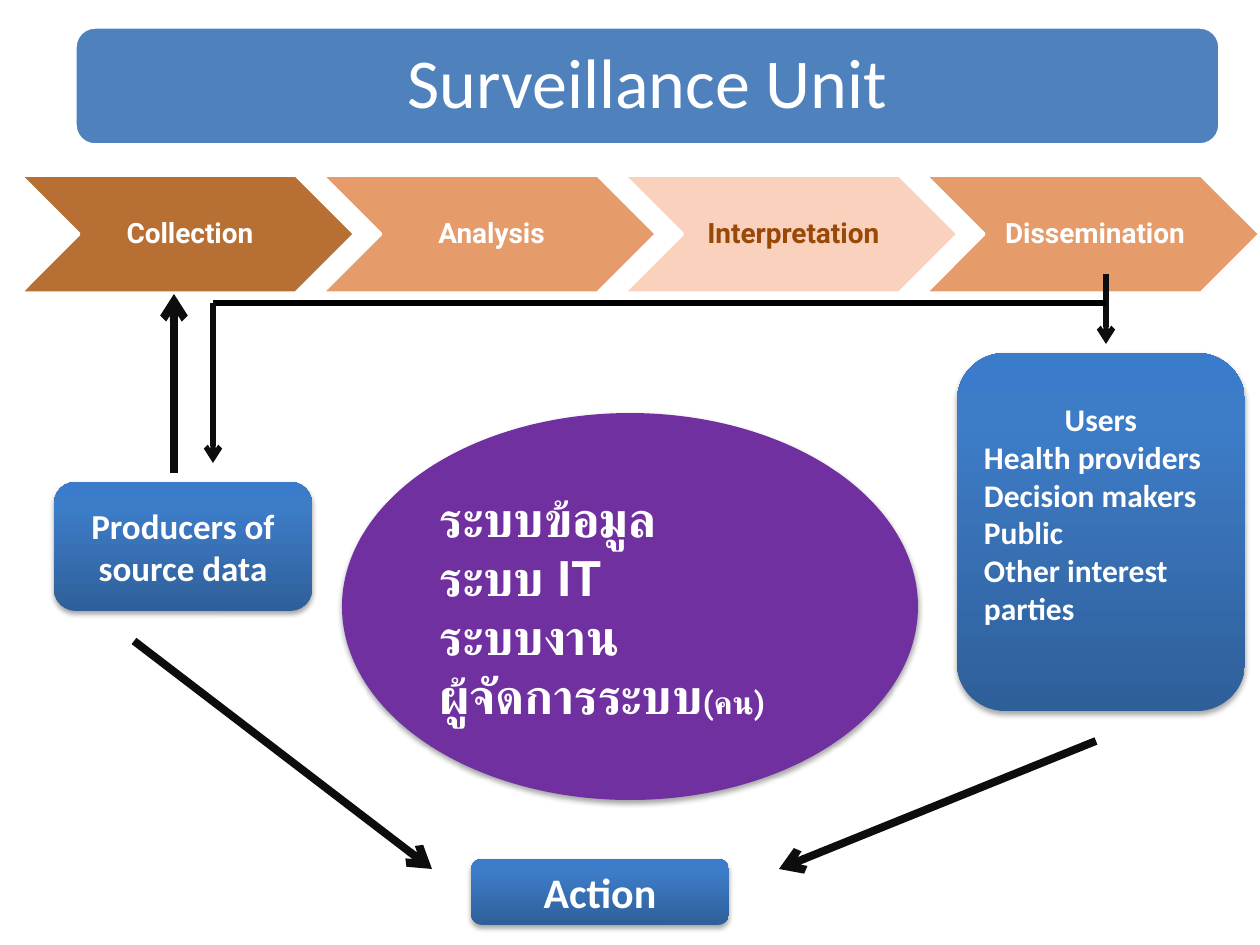
"""Build the surveillance unit flow slide."""
from dataclasses import dataclass
from lxml.etree import SubElement
from pptx import Presentation
from pptx.dml.color import RGBColor
from pptx.enum.shapes import MSO_CONNECTOR, MSO_SHAPE
from pptx.enum.text import MSO_ANCHOR, PP_ALIGN
from pptx.oxml.ns import qn
from pptx.util import Pt

SCALE = 914400 / 126


@dataclass(frozen=True)
class Theme:
    white: str = "FFFFFF"
    blue: str = "4F81BD"
    purple: str = "7030A0"
    brown: str = "B76F34"
    orange: str = "E69B6B"
    peach: str = "FAD1BD"
    rust: str = "984807"
    ink: str = "0D0D0D"
    black: str = "000000"
    grad: tuple = ((0, "2F5F99"), (80, "3D7CC7"), (100, "3A7CCB"))
    head: int = 40
    step: int = 16
    large: int = 28
    small: int = 18
    box: int = 20
    goal: int = 24
    sans: str = "Calibri"
    alt: str = "Roboto"


T = Theme()
LEFT, MID = PP_ALIGN.LEFT, PP_ALIGN.CENTER

TITLE = "Surveillance Unit"
STEPS = [
    ("Collection", T.brown, T.white),
    ("Analysis", T.orange, T.white),
    ("Interpretation", T.peach, T.rust),
    ("Dissemination", T.orange, T.white),
]
CORE = [
    (LEFT, [("ระบบข้อมูล", T.large)]),
    (LEFT, [("ระบบ IT", T.large)]),
    (LEFT, [("ระบบงาน", T.large)]),
    (LEFT, [("ผู้จัดการระบบ", T.large), ("(คน)", T.small)]),
]
USERS = [(MID, [("Users", T.small)])] + [
    (LEFT, [(name, T.small)])
    for name in ("Health providers", "Decision makers", "Public",
                 "Other interest parties")
]
BOXES = [
    ((54, 482, 258, 129), [(MID, [("Producers of source data", T.box)])], 6),
    ((957, 353, 288, 358), USERS, 43),
    ((471, 859, 258, 66), [(MID, [("Action", T.goal)])], 6),
]
LINES = [
    ((1096, 741), (779, 869), T.ink, 4.5, True),
    ((1106, 274), (1106, 344), T.ink, 3, True),
    ((134, 641), (432, 869), T.ink, 4.5, True),
    ((174, 473), (174, 294), T.ink, 4.5, True),
    ((1106, 303), (213, 303), T.black, 3, False),
    ((213, 303), (213, 463), T.ink, 3, True),
]


def px(*nums):
    return [round(num * SCALE) for num in nums]


def rgb(code):
    return RGBColor.from_string(code)


def write(shape, paras, font, color, bold=True, pad=(13, 6, 13, 6), gap=1.0):
    frame = shape.text_frame
    frame.word_wrap = True
    frame.vertical_anchor = MSO_ANCHOR.MIDDLE
    (frame.margin_left, frame.margin_top,
     frame.margin_right, frame.margin_bottom) = px(*pad)
    for i, (align, runs) in enumerate(paras):
        para = frame.add_paragraph() if i else frame.paragraphs[0]
        para.alignment = align
        para.line_spacing = gap
        for text, size in runs:
            run = para.add_run()
            run.text = text
            run.font.name = font
            run.font.size = Pt(size)
            run.font.bold = bold
            run.font.color.rgb = rgb(color)


def draw(slide, kind, area, fill=None, edge=None):
    shape = slide.shapes.add_shape(kind, *px(*area))
    shape.shadow.inherit = False
    if fill:
        shape.fill.solid()
        shape.fill.fore_color.rgb = rgb(fill)
    if edge:
        shape.line.color.rgb = rgb(edge)
        shape.line.width = Pt(2)
    else:
        shape.line.fill.background()
    return shape


def shade(shape):
    shape.fill.gradient()
    shape.fill.gradient_angle = 90
    stops = shape._element.spPr.find(".//" + qn("a:gsLst"))
    for stop in list(stops):
        stops.remove(stop)
    for pos, code in T.grad:
        stop = SubElement(stops, qn("a:gs"), pos=str(pos * 1000))
        SubElement(stop, qn("a:srgbClr"), val=code)


def lift(shape):
    effect = shape._element.spPr.find(qn("a:effectLst"))
    cast = SubElement(effect, qn("a:outerShdw"), blurRad=str(Pt(3.1)),
                      dist=str(Pt(1.8)), dir="5400000", rotWithShape="0")
    tint = SubElement(cast, qn("a:srgbClr"), val=T.black)
    SubElement(tint, qn("a:alpha"), val="35000")


def join(slide, start, end, color, width, arrow):
    link = slide.shapes.add_connector(
        MSO_CONNECTOR.STRAIGHT, *px(*start, *end))
    link.line.color.rgb = rgb(color)
    link.line.width = Pt(width)
    props = link._element.spPr
    if arrow:
        SubElement(props.find(qn("a:ln")), qn("a:tailEnd"), type="arrow")
    SubElement(props, qn("a:effectLst"))


def main():
    deck = Presentation()
    deck.slide_width, deck.slide_height = px(1260, 945)
    slide = deck.slides.add_slide(deck.slide_layouts[5])

    area = (75, 27, 1145, 118)
    banner = draw(slide, MSO_SHAPE.ROUNDED_RECTANGLE, area, T.blue, T.white)
    banner.adjustments[0] = 0.17
    title = slide.shapes.title
    title.left, title.top, title.width, title.height = px(*area)
    banner._element.addnext(title._element)
    write(title, [(MID, [(TITLE, T.head)])], T.sans, T.white, False,
          (21, 21, 21, 21), 0.9)

    left, wide = 20, 335
    pitch = (1260 - left - wide) / (len(STEPS) - 1)
    for i, (name, fill, ink) in enumerate(STEPS):
        step = draw(slide, MSO_SHAPE.CHEVRON,
                    (left + i * pitch, 175, wide, 118), fill, T.white)
        write(step, [(MID, [(name, T.step)])], T.alt, ink,
              pad=(8, 3, 3, 3), gap=0.9)

    core = draw(slide, MSO_SHAPE.OVAL, (342, 413, 576, 387), T.purple)
    lift(core)
    write(core, CORE, T.alt, T.white)

    for area, paras, base in BOXES:
        box = draw(slide, MSO_SHAPE.ROUNDED_RECTANGLE, area)
        shade(box)
        lift(box)
        write(box, paras, T.sans, T.white, pad=(13, 6, 13, base))

    for line in LINES:
        join(slide, *line)
    deck.save("out.pptx")


if __name__ == "__main__":
    main()
